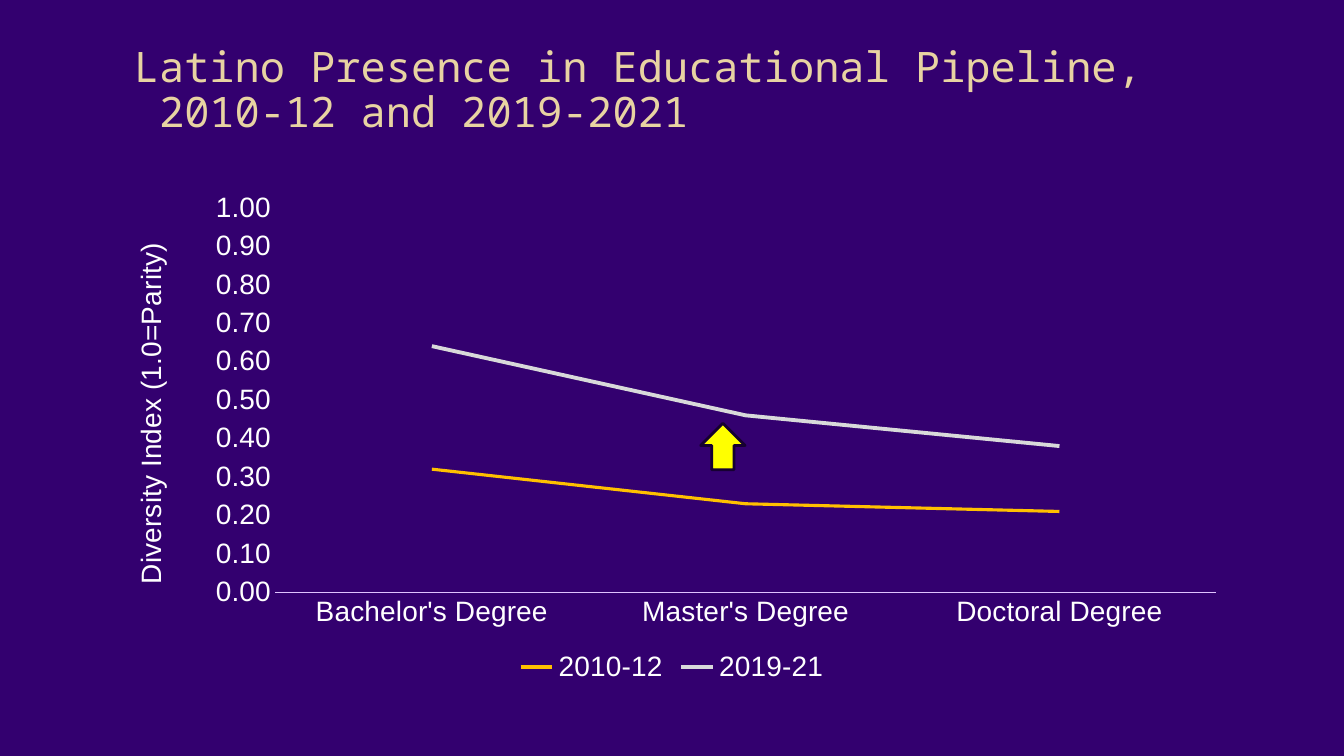
from lxml import etree
from pptx import Presentation, util as u
from pptx.chart.data import CategoryChartData
from pptx.dml.color import RGBColor
from pptx.enum import chart as ch, shapes
from pptx.oxml.ns import qn

WHITE = "FFFFFF"


def rgb(code):
    return RGBColor.from_string(code)


def place(parent, index, **shares):
    """Fix a chart part at shares of the chart's size."""
    for old in parent.findall(qn("c:layout")):
        parent.remove(old)
    layout = etree.Element(qn("c:layout"))
    parent.insert(index, layout)
    manual = etree.SubElement(layout, qn("c:manualLayout"))
    if "w" in shares:
        etree.SubElement(manual, qn("c:layoutTarget")).set("val", "inner")
    for mode in ("xMode", "yMode"):
        etree.SubElement(manual, qn("c:" + mode)).set("val", "edge")
    for name, share in shares.items():
        etree.SubElement(manual, qn("c:" + name)).set("val", str(share))


prs = Presentation()
prs.slide_width, prs.slide_height = u.Inches(13.33), u.Inches(7.5)
s = prs.slides.add_slide(prs.slide_layouts[6])
s.background.fill.solid()
s.background.fill.fore_color.rgb = rgb("33006F")

# Title with a hanging first line
title = s.shapes.add_textbox(u.Inches(0.98), u.Inches(0.41), u.Inches(11.93), u.Inches(1.08))
tf = title.text_frame
tf.word_wrap = True
tf.text = "Latino Presence in Educational Pipeline, 2010-12 and 2019-2021"
p = tf.paragraphs[0]
p.line_spacing = 0.9
pPr = p._p.get_or_add_pPr()
pPr.set("marL", str(u.Inches(0.5)))
pPr.set("indent", str(u.Inches(-0.25)))
r = p.runs[0]
r.font.name, r.font.size = "Noto Sans Mono", u.Pt(30)
r.font.color.rgb = rgb("E8D3A2")

# Line chart
series = [
    ("2010-12", (0.32, 0.23, 0.21), "FFC000", 2.25),
    ("2019-21", (0.64, 0.46, 0.38), "D8D9DA", 2.75),
]
data = CategoryChartData(number_format="0.00")
data.categories = ["Bachelor's Degree", "Master's Degree", "Doctoral Degree"]
for name, values, color, width in series:
    data.add_series(name, values)
chart = s.shapes.add_chart(
    ch.XL_CHART_TYPE.LINE, u.Inches(1.04), u.Inches(1.81), u.Inches(11.25), u.Inches(5.02), data
).chart
chart.has_title = False
chart.font.name, chart.font.size = "Arial", u.Pt(20)
chart.font.color.rgb = rgb(WHITE)
chart.has_legend = True
chart.legend.position = ch.XL_LEGEND_POSITION.BOTTOM
chart.legend.include_in_layout = False
chart.plots[0].vary_by_categories = False
for line, (name, values, color, width) in zip(chart.plots[0].series, series):
    line.smooth = False
    line.marker.style = ch.XL_MARKER_STYLE.NONE
    line.format.line.color.rgb = rgb(color)
    line.format.line.width = u.Pt(width)

cat_axis, val_axis = chart.category_axis, chart.value_axis
for axis in (cat_axis, val_axis):
    axis.major_tick_mark = axis.minor_tick_mark = ch.XL_TICK_MARK.NONE
    axis.has_major_gridlines = False
cat_axis.format.line.color.rgb = rgb("DFC3FF")
cat_axis.format.line.width = u.Pt(0.75)
val_axis.format.line.fill.background()
val_axis.minimum_scale, val_axis.maximum_scale, val_axis.major_unit = 0, 1, 0.1
val_axis.tick_labels.number_format = "#,##0.00"
val_axis.tick_labels.number_format_is_linked = False

tf = val_axis.axis_title.text_frame
tf.text = "Diversity Index (1.0=Parity)"
r = tf.paragraphs[0].runs[0]
r.font.name, r.font.size, r.font.bold = "Arial", u.Pt(20), False
r.font.color.rgb = rgb(WHITE)
place(val_axis.axis_title._element, 1, x=0.02, y=0.11)
place(chart._chartSpace.chart.plotArea, 0, x=0.15, y=0.05, w=0.83, h=0.76)

# Arrow pointing up at the later line
arrow = s.shapes.add_shape(
    shapes.MSO_SHAPE.UP_ARROW, u.Inches(6.95), u.Inches(4.2), u.Inches(0.44), u.Inches(0.46)
)
arrow.shadow.inherit = False
arrow.fill.solid()
arrow.fill.fore_color.rgb = rgb("FFFF00")
arrow.line.color.rgb = rgb("160031")
arrow.line.width = u.Pt(2)

prs.save("out.pptx")
